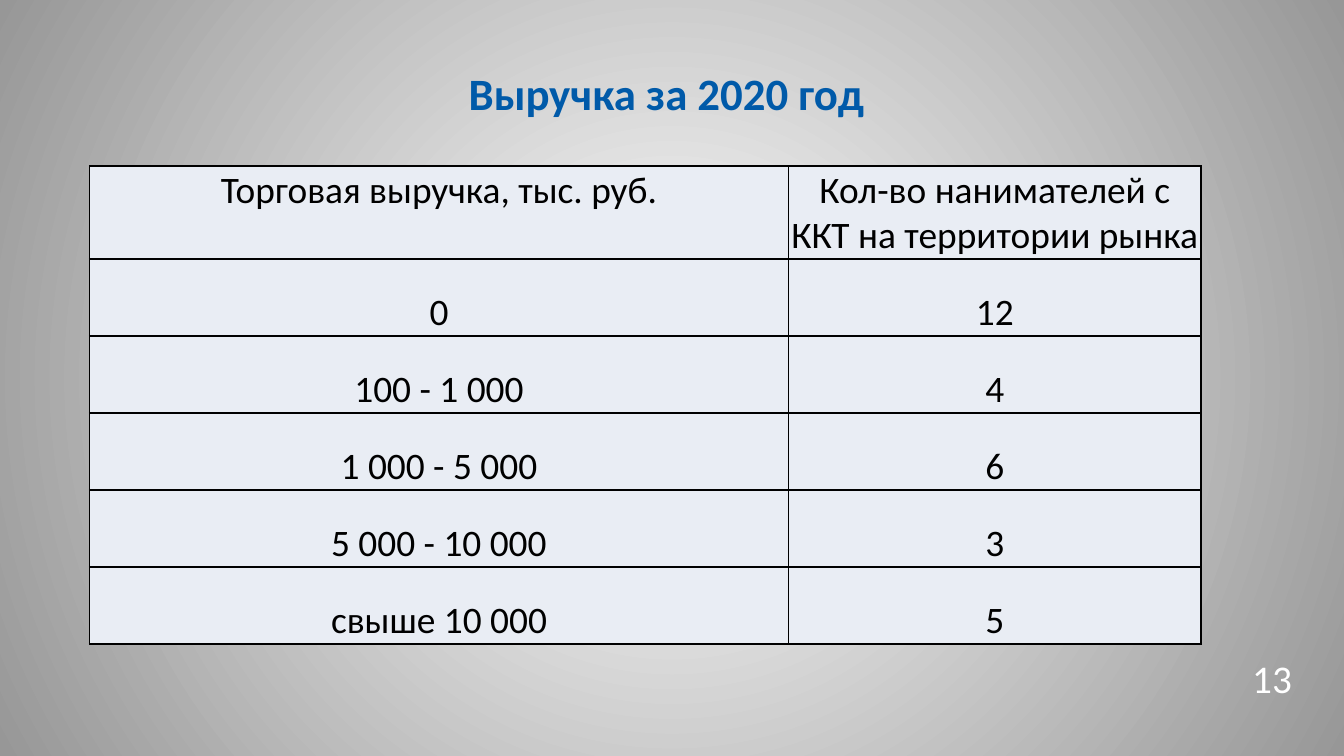
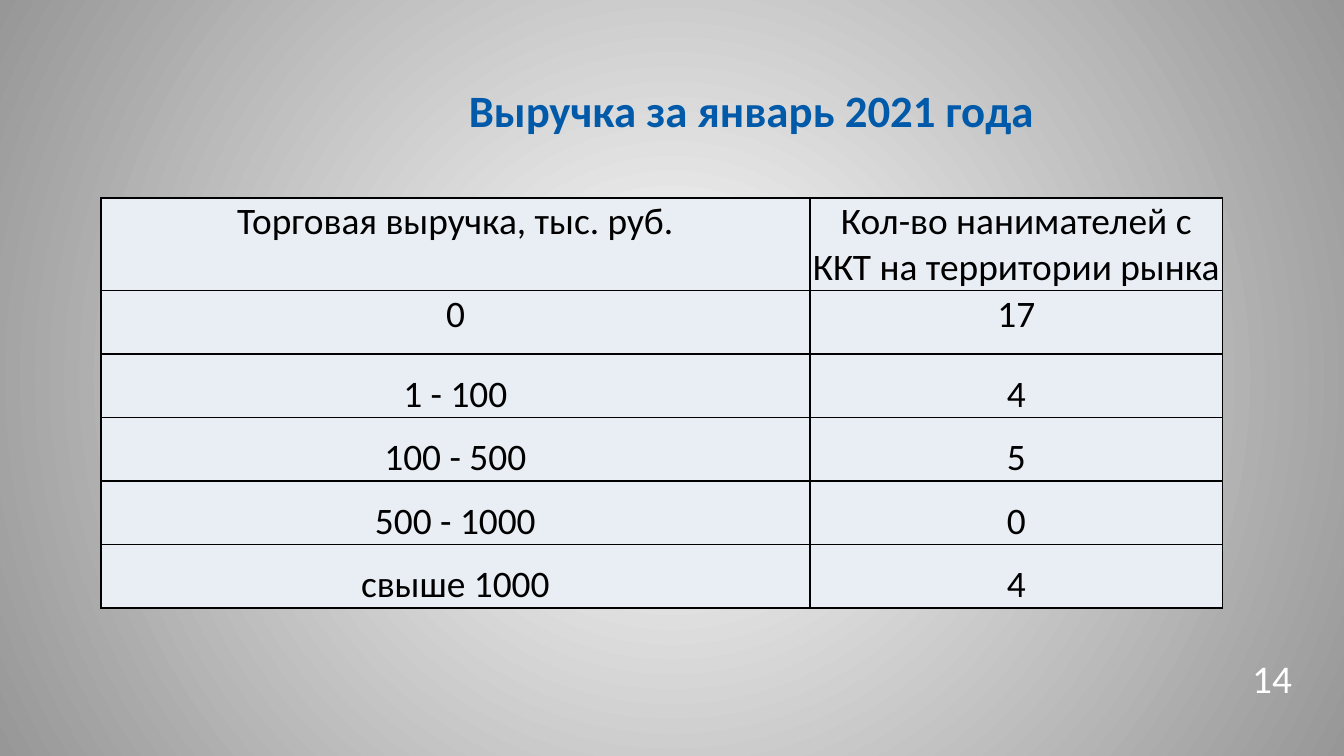
from lxml import etree
from pptx import Presentation
from pptx.dml.color import RGBColor
from pptx.enum import text
from pptx.oxml import ns
from pptx.util import Pt

COLORS = {
    "title": "005AA9", "number": "FFFFFF", "body": "000000", "cell": "E9EDF4",
    "border": "000000", "center": "FFFFFF", "edge": "979797",
}
FONT = "Calibri"
TITLE_ONLY = 5
HEADER = ("Торговая выручка, тыс. руб.", "Кол-во нанимателей с ККТ на территории рынка")
HEADER_HEIGHT = 45.5


def rgb(name):
    return RGBColor.from_string(COLORS[name])


class Deck:
    """Shared style and the slide being built."""

    def __init__(self, width, height):
        self.presentation = Presentation()
        self.presentation.slide_width = Pt(width)
        self.presentation.slide_height = Pt(height)
        self.slide = None

    def add_slide(self):
        layout = self.presentation.slide_layouts[TITLE_ONLY]
        self.slide = self.presentation.slides.add_slide(layout)
        self.background()

    def background(self):
        fill = self.slide.background.fill
        fill.gradient()
        for stop, name in zip(fill.gradient_stops, ("center", "edge")):
            stop.color.rgb = rgb(name)
        # Radial gradient around the middle of the slide
        gradient = self.slide.element.find(".//" + ns.qn("a:gradFill"))
        gradient.remove(gradient.find(ns.qn("a:lin")))
        radial = etree.SubElement(gradient, ns.qn("a:path"), path="circle")
        etree.SubElement(radial, ns.qn("a:fillToRect"),
                         {side: "50000" for side in "ltrb"})

    def format_text(self, paragraph, size, color, bold=False):
        paragraph.alignment = text.PP_ALIGN.CENTER
        for run in paragraph.runs:
            run.font.name = FONT
            run.font.size = Pt(size)
            run.font.bold = bold
            run.font.color.rgb = rgb(color)

    def fill_frame(self, shape, words, size, color, bold=False, indent=0):
        frame = shape.text_frame
        frame.text = words
        frame.word_wrap = True
        frame.auto_size = text.MSO_AUTO_SIZE.NONE
        frame.vertical_anchor = text.MSO_ANCHOR.MIDDLE
        frame.margin_left, frame.margin_right = Pt(6.5 + indent), Pt(6.5)
        frame.margin_top = frame.margin_bottom = Pt(3)
        self.format_text(frame.paragraphs[0], size, color, bold)
        return frame.paragraphs[0]

    def title(self, words, left, top, width, height, indent):
        shape = self.slide.shapes.title
        shape.left, shape.top = Pt(left), Pt(top)
        shape.width, shape.height = Pt(width), Pt(height)
        self.fill_frame(shape, words, 24, "title", True, indent)

    def number(self, value):
        box = self.slide.shapes.add_textbox(Pt(661.5), Pt(346.5), Pt(40), Pt(40))
        paragraph = self.fill_frame(box, str(value), 21, "number")
        paragraph.line_spacing = Pt(18.8)

    def borders(self, cell):
        properties = cell._tc.get_or_add_tcPr()
        for index, side in enumerate("LRTB"):
            line = etree.Element(ns.qn("a:ln" + side), w=str(Pt(1)))
            solid = etree.SubElement(line, ns.qn("a:solidFill"))
            etree.SubElement(solid, ns.qn("a:srgbClr"), val=COLORS["border"])
            properties.insert(index, line)

    def table(self, left, top, column_widths, row_height, data, top_rows=1):
        """Rows before top_rows are anchored at the top, the rest at the bottom."""
        rows = [HEADER, *data]
        heights = [HEADER_HEIGHT] + [row_height] * len(data)
        table = self.slide.shapes.add_table(
            len(rows), len(HEADER), Pt(left), Pt(top),
            Pt(sum(column_widths)), Pt(sum(heights))).table
        table.first_row = table.horz_banding = False
        for column, width in zip(table.columns, column_widths):
            column.width = Pt(width)
        for row, height in zip(table.rows, heights):
            row.height = Pt(height)
        for row_index, values in enumerate(rows):
            for column_index, value in enumerate(values):
                cell = table.cell(row_index, column_index)
                cell.text_frame.text = value
                cell.margin_left = cell.margin_right = cell.margin_top = Pt(0.7)
                cell.margin_bottom = Pt(0)
                cell.vertical_anchor = (text.MSO_ANCHOR.TOP if row_index < top_rows
                                        else text.MSO_ANCHOR.BOTTOM)
                cell.fill.solid()
                cell.fill.fore_color.rgb = rgb("cell")
                self.borders(cell)
                self.format_text(cell.text_frame.paragraphs[0], 20, "body")


def main():
    deck = Deck(720, 405)

    # Revenue for 2020
    deck.add_slide()
    deck.title("Выручка за 2020 год", 54, 26.5, 601, 46, indent=5)
    deck.table(48, 89, (374.5, 221), 41.25, [
        ("0", "12"),
        ("100 - 1 000", "4"),
        ("1 000 - 5 000", "6"),
        ("5 000 - 10 000", "3"),
        ("свыше 10 000", "5"),
    ])
    deck.number(13)

    # Revenue for January 2021
    deck.add_slide()
    deck.title("Выручка за январь 2021 года", 48, 32.5, 601, 52, indent=108)
    deck.table(54, 106, (380, 221), 34, [
        ("0", "17"),
        ("1 - 100", "4"),
        ("100 - 500", "5"),
        ("500 - 1000", "0"),
        ("свыше 1000", "4"),
    ], top_rows=2)
    deck.number(14)

    deck.presentation.save("out.pptx")


if __name__ == "__main__":
    main()
